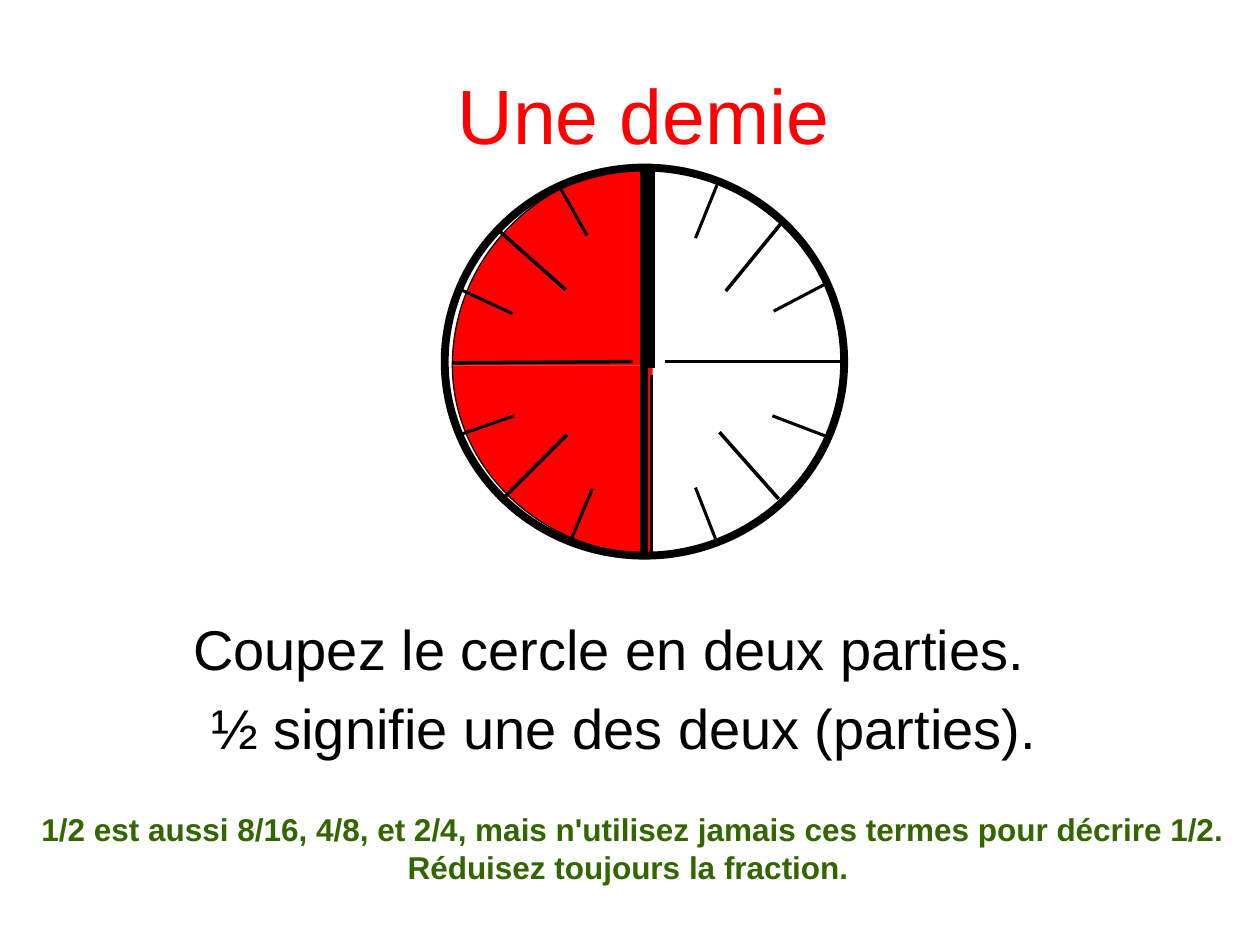
"""Build a slide showing one half as a shaded, divided circle."""
from copy import deepcopy

from lxml.etree import SubElement
from pptx import Presentation
from pptx.dml.color import RGBColor
from pptx.enum.shapes import MSO_CONNECTOR, MSO_SHAPE
from pptx.enum.text import MSO_ANCHOR, MSO_AUTO_SIZE, PP_ALIGN
from pptx.oxml.ns import qn
from pptx.util import Inches, Pt

TITLE = "Une demie"
STEPS = [
    ("Coupez le cercle en deux parties.", 0),
    ("½ signifie une des deux (parties).", 0.24),
]
CAPTION = (
    "1/2 est aussi 8/16, 4/8, et 2/4, mais n'utilisez jamais ces termes "
    "pour décrire 1/2. Réduisez toujours la fraction. "
)
THEME = {
    "accent": RGBColor(0xFF, 0, 0),
    "ink": RGBColor(0, 0, 0),
    "note": RGBColor(0x33, 0x66, 0),
    "title": {"name": "Arial", "size": Pt(44), "bold": False},
    "body": {"name": "Arial", "size": Pt(32), "bold": False},
    "caption": {"name": "Arial", "size": Pt(18), "bold": True},
}
UNITS_PER_INCH = 100
HUB = (518, 290)
QUARTERS = [(159, -158), (159, 150)]
BEZIER_SHARE = 0.55
CIRCLE = (3.53, 1.33, 3.17, 3.08)
LINES = {
    4.5: [(5.17, 1.33, 5.17, 2.92), (5.11, 1.33, 5.11, 4.42)],
    2: [
        (5.17, 2.98, 5.17, 4.4), (3.59, 2.88, 5.02, 2.87),
        (6.69, 2.87, 5.28, 2.87), (4.5, 3.45, 4, 3.95),
        (5.71, 3.43, 6.18, 3.96), (5.76, 2.31, 6.21, 1.76),
        (3.96, 1.83, 4.49, 2.3),
    ],
    1.75: [
        (4.7, 3.88, 4.53, 4.29), (5.69, 1.47, 5.52, 1.89),
        (4.66, 1.87, 4.44, 1.48), (5.52, 3.87, 5.68, 4.28),
        (4.08, 3.3, 3.65, 3.45), (6.55, 3.46, 6.13, 3.3),
        (4.07, 2.49, 3.66, 2.3), (6.54, 2.26, 6.14, 2.47),
    ],
}


def apply(target, values):
    for name, value in values.items():
        setattr(target, name, value)


def write(shape, box, lines, style, color, anchor=MSO_ANCHOR.TOP):
    apply(shape, dict(zip(("left", "top", "width", "height"), map(Inches, box))))
    frame = shape.text_frame
    apply(frame, {"word_wrap": True, "auto_size": MSO_AUTO_SIZE.NONE,
                  "vertical_anchor": anchor})
    frame.text = "\n".join(text for text, _ in lines)
    for paragraph, (_, indent) in zip(frame.paragraphs, lines):
        paragraph.alignment = PP_ALIGN.CENTER
        properties = paragraph._p.get_or_add_pPr()
        properties.set("marL", str(Inches(indent)))
        properties.set("indent", "0")
        SubElement(properties, qn("a:buNone"))
        font = paragraph.runs[0].font
        apply(font, THEME[style])
        font.color.rgb = THEME[color]


def outline(shape, width):
    shape.line.color.rgb = THEME["ink"]
    shape.line.width = Pt(width)


def round_corner(shape):
    sector = shape._element.spPr.find(".//" + qn("a:path"))
    start, end = [(int(point.get("x")), int(point.get("y")))
                  for point in sector.iter(qn("a:pt"))][:2]
    controls = [
        (round(start[0] + BEZIER_SHARE * (end[0] - start[0])), start[1]),
        (end[0], round(end[1] + BEZIER_SHARE * (start[1] - end[1]))),
        end,
    ]
    straight = sector.find(qn("a:lnTo"))
    curve = SubElement(sector, qn("a:cubicBezTo"))
    for x, y in controls:
        SubElement(curve, qn("a:pt"), x=str(x), y=str(y))
    sector.replace(straight, curve)
    rim = deepcopy(sector)
    for name in ("a:lnTo", "a:close"):
        rim.remove(rim.find(qn(name)))
    rim.set("fill", "none")
    sector.set("stroke", "0")
    sector.addprevious(rim)


def add_quarter(slide, radius_x, radius_y):
    builder = slide.shapes.build_freeform(
        HUB[0], HUB[1] + radius_y, scale=Inches(1) / UNITS_PER_INCH)
    builder.add_line_segments([(HUB[0] - radius_x, HUB[1]), HUB], close=False)
    shape = builder.convert_to_shape()
    sector = shape._element.spPr.find(".//" + qn("a:path"))
    SubElement(sector, qn("a:close"))
    round_corner(shape)
    shape.shadow.inherit = False
    shape.fill.solid()
    shape.fill.fore_color.rgb = THEME["accent"]
    outline(shape, 0.75)


def add_line(slide, ends, width):
    connector = slide.shapes.add_connector(MSO_CONNECTOR.STRAIGHT, *map(Inches, ends))
    outline(connector, width)
    SubElement(connector._element.spPr, qn("a:effectLst"))


def main():
    presentation = Presentation()
    apply(presentation, {"slide_width": Inches(10), "slide_height": Inches(7.5)})
    slide = presentation.slides.add_slide(presentation.slide_layouts[1])
    write(slide.shapes.title, (0.61, 0.28, 9, 1.25), [(TITLE, 0)],
          "title", "accent", MSO_ANCHOR.MIDDLE)
    write(slide.placeholders[1], (0.46, 4.83, 8.75, 2.03), STEPS, "body", "ink")
    for quarter in QUARTERS:
        add_quarter(slide, *quarter)
    circle = slide.shapes.add_shape(MSO_SHAPE.OVAL, *map(Inches, CIRCLE))
    circle.shadow.inherit = False
    circle.fill.background()
    outline(circle, 4.5)
    for width, segments in LINES.items():
        for ends in segments:
            add_line(slide, ends, width)
    caption = slide.shapes.add_textbox(0, 0, 0, 0)
    write(caption, (0.2, 6.38, 9.64, 0.7), [(CAPTION, 0)], "caption", "note")
    presentation.save("out.pptx")


if __name__ == "__main__":
    main()
